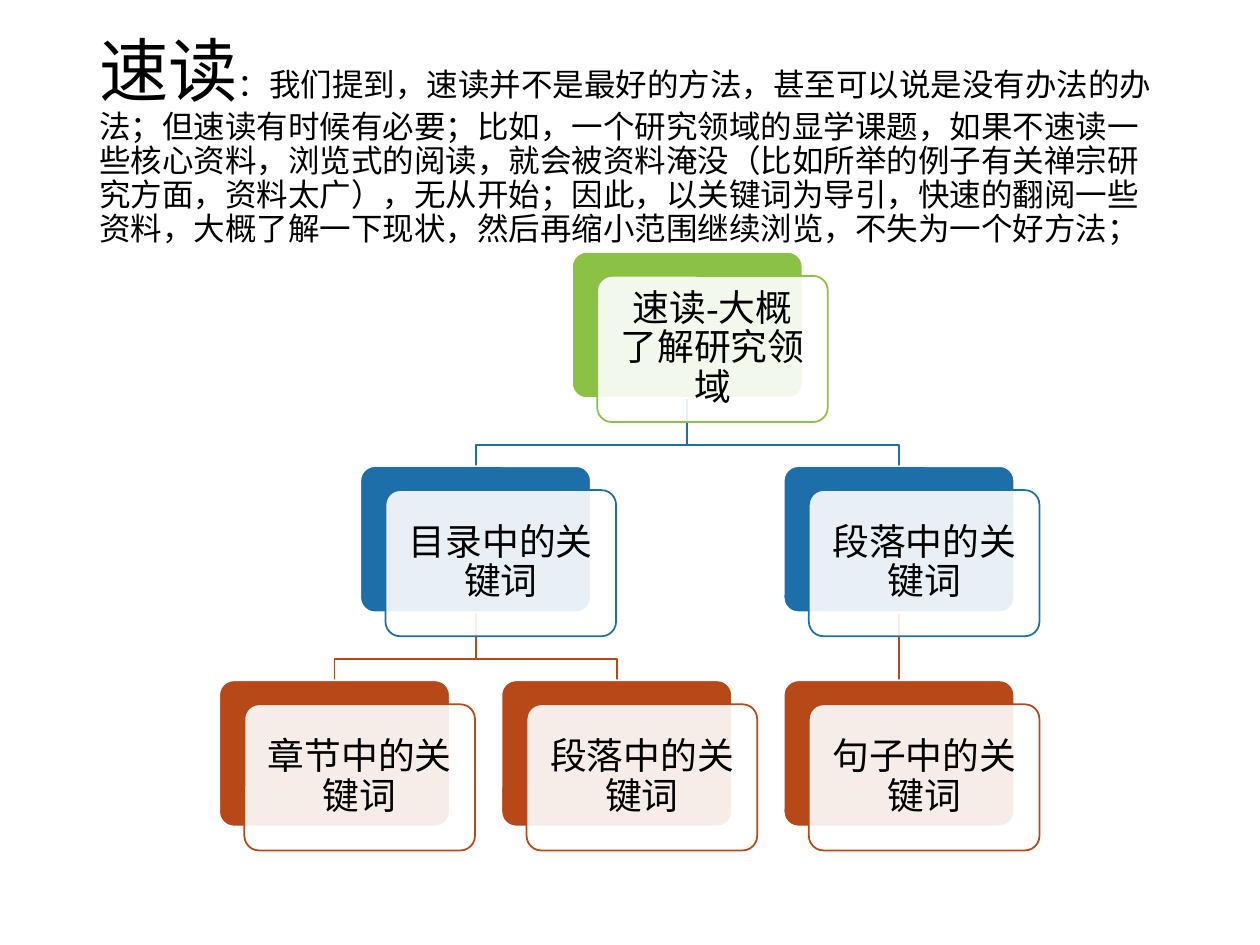
from dataclasses import dataclass

from lxml import etree
from pptx import Presentation
from pptx.dml.color import RGBColor
from pptx.enum.shapes import MSO_CONNECTOR, MSO_SHAPE
from pptx.enum.text import MSO_ANCHOR, PP_ALIGN
from pptx.oxml.ns import qn
from pptx.util import Inches, Pt

ROUNDED = MSO_SHAPE.ROUNDED_RECTANGLE
STRAIGHT = MSO_CONNECTOR.STRAIGHT
MIDDLE = MSO_ANCHOR.MIDDLE
CENTER = PP_ALIGN.CENTER


@dataclass(frozen=True)
class Theme:
    font: str = "Times New Roman"
    ink: RGBColor = RGBColor(0, 0, 0)
    paper: RGBColor = RGBColor(255, 255, 255)
    levels: tuple[RGBColor, ...] = (
        RGBColor(0x8B, 0xC1, 0x45),
        RGBColor(0x1D, 0x6F, 0xA9),
        RGBColor(0xB7, 0x49, 0x19),
    )
    lead_size: float = 39.6
    body_size: float = 18
    topic_size: float = 21
    line_width: float = 1
    line_spacing: float = 0.9
    veil_percent: int = 90


@dataclass(frozen=True)
class Topic:
    label: str
    children: tuple["Topic", ...] = ()


@dataclass(frozen=True)
class Placed:
    label: str
    level: int
    left: float
    children: tuple["Placed", ...]

    @property
    def top(self) -> float:
        return TREE_TOP + self.level * LEVEL_PITCH

    @property
    def center(self) -> float:
        return self.left + CARD_WIDTH / 2


THEME = Theme()
TREE_LEFT, TREE_TOP = 1.74, 2.0
LEAF_PITCH, LEVEL_PITCH = 2.24, 1.7
CARD_WIDTH, CARD_HEIGHT = 1.83, 1.16
OFFSET_X, OFFSET_Y = 0.2, 0.19
BEND_DROP = 0.37
CARD_INSET = 0.12

LEAD = "速读"
EXPLANATION = (
    "：我们提到，速读并不是最好的方法，甚至可以说是没有办法的办法；"
    "但速读有时候有必要；比如，一个研究领域的显学课题，如果不速读一些核心资料，"
    "浏览式的阅读，就会被资料淹没（比如所举的例子有关禅宗研究方面，资料太广），"
    "无从开始；因此，以关键词为导引，快速的翻阅一些资料，大概了解一下现状，"
    "然后再缩小范围继续浏览，不失为一个好方法；"
)
OUTLINE = Topic("速读-大概了解研究领域", (
    Topic("目录中的关键词", (Topic("章节中的关键词"), Topic("段落中的关键词"))),
    Topic("段落中的关键词", (Topic("句子中的关键词"),)),
))


def place(topic: Topic, level: int = 0, first_leaf: int = 0) -> tuple[Placed, int]:
    children = []
    next_leaf = first_leaf
    for child in topic.children:
        placed, next_leaf = place(child, level + 1, next_leaf)
        children.append(placed)
    if children:
        left = (children[0].left + children[-1].left) / 2
    else:
        left = TREE_LEFT + first_leaf * LEAF_PITCH
        next_leaf = first_leaf + 1
    return Placed(topic.label, level, left, tuple(children)), next_leaf


def style_run(run, size: float) -> None:
    run.font.name = THEME.font
    run.font.size = Pt(size)
    run.font.color.rgb = THEME.ink


def draw_title(slide) -> None:
    title = slide.shapes.add_textbox(Inches(0.69), Inches(0.4), Inches(8.62), Inches(1.45))
    frame = title.text_frame
    frame.word_wrap = True
    frame.vertical_anchor = MIDDLE
    paragraph = frame.paragraphs[0]
    paragraph.line_spacing = THEME.line_spacing
    for wording, size in ((LEAD, THEME.lead_size), (EXPLANATION, THEME.body_size)):
        run = paragraph.add_run()
        run.text = wording
        style_run(run, size)


def draw_branch(slide, parent: Placed, child: Placed) -> None:
    start_y = parent.top + CARD_HEIGHT
    if child.center == parent.center:
        branch = slide.shapes.add_connector(
            STRAIGHT, Inches(parent.center), Inches(start_y),
            Inches(child.center), Inches(child.top))
        etree.SubElement(branch._element.spPr, qn("a:effectLst"))
    else:
        bend_y = start_y + BEND_DROP
        route = [(parent.center, bend_y), (child.center, bend_y), (child.center, child.top)]
        builder = slide.shapes.build_freeform(Inches(parent.center), Inches(start_y))
        builder.add_line_segments([(Inches(x), Inches(y)) for x, y in route], close=False)
        branch = builder.convert_to_shape()
        branch.fill.background()
        branch.shadow.inherit = False
    branch.line.color.rgb = THEME.levels[child.level]
    branch.line.width = Pt(THEME.line_width)


def draw_card(slide, left: float, top: float, fill: RGBColor, line: RGBColor):
    card = slide.shapes.add_shape(
        ROUNDED, Inches(left), Inches(top), Inches(CARD_WIDTH), Inches(CARD_HEIGHT))
    card.adjustments[0] = 0.1
    card.shadow.inherit = False
    card.fill.solid()
    card.fill.fore_color.rgb = fill
    card.line.color.rgb = line
    card.line.width = Pt(THEME.line_width)
    return card


def draw_topic(slide, topic: Placed) -> None:
    color = THEME.levels[topic.level]
    draw_card(slide, topic.left, topic.top, color, THEME.paper)
    front = draw_card(slide, topic.left + OFFSET_X, topic.top + OFFSET_Y, THEME.paper, color)
    fill_color = front._element.spPr.find(qn("a:solidFill"))[0]
    etree.SubElement(fill_color, qn("a:alpha"), val=str(THEME.veil_percent * 1000))
    frame = front.text_frame
    frame.word_wrap = True
    frame.vertical_anchor = MIDDLE
    frame.margin_left = frame.margin_right = Inches(CARD_INSET)
    frame.margin_top = frame.margin_bottom = Inches(CARD_INSET)
    frame.text = topic.label
    paragraph = frame.paragraphs[0]
    paragraph.alignment = CENTER
    paragraph.line_spacing = THEME.line_spacing
    style_run(paragraph.runs[0], THEME.topic_size)


def draw_branches(slide, topic: Placed) -> None:
    for child in topic.children:
        draw_branches(slide, child)
        draw_branch(slide, topic, child)


def draw_topics(slide, topic: Placed) -> None:
    draw_topic(slide, topic)
    for child in topic.children:
        draw_topics(slide, child)


def main() -> None:
    deck = Presentation()
    deck.slide_width, deck.slide_height = Inches(10), Inches(7.5)
    slide = deck.slides.add_slide(deck.slide_layouts[6])
    draw_title(slide)
    root, _ = place(OUTLINE)
    draw_branches(slide, root)
    draw_topics(slide, root)
    deck.save("out.pptx")


if __name__ == "__main__":
    main()
